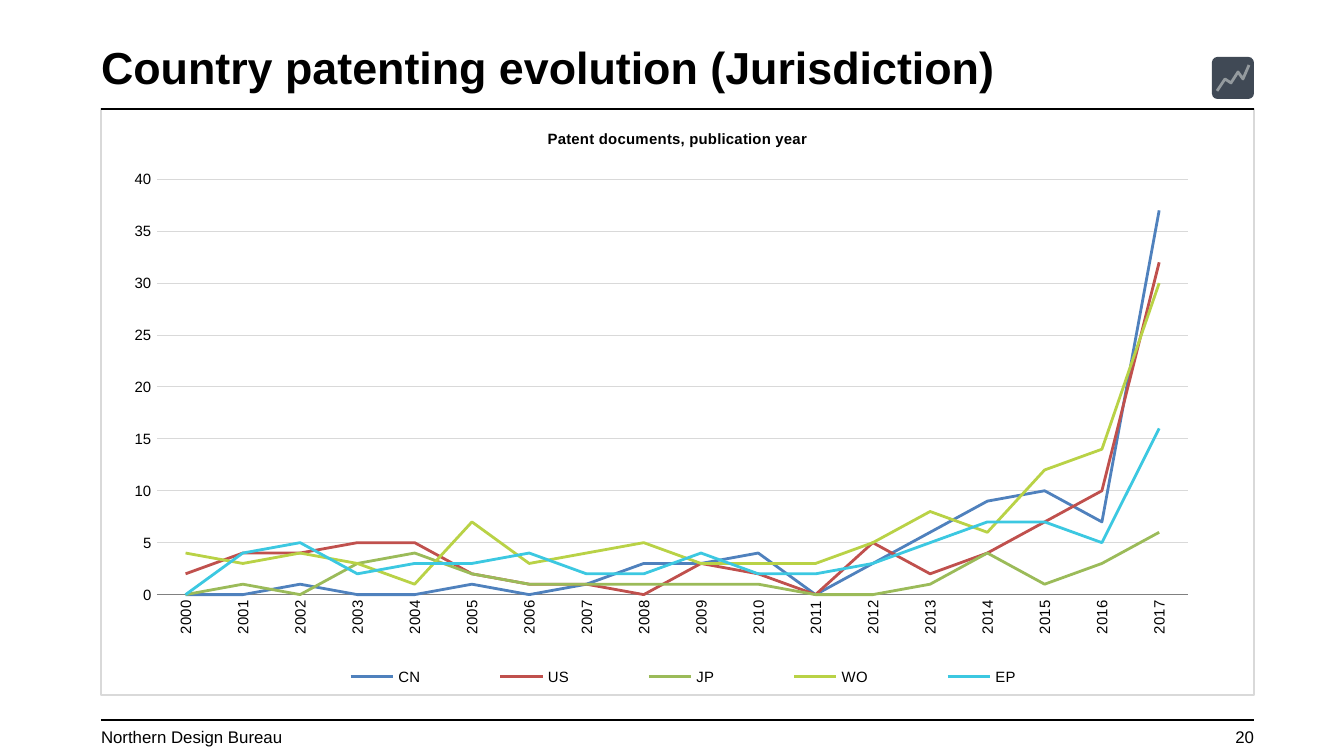
from lxml.etree import SubElement
from pptx import Presentation
from pptx.chart.data import CategoryChartData
from pptx.dml.color import RGBColor
from pptx.enum.chart import XL_CHART_TYPE, XL_LEGEND_POSITION, XL_MARKER_STYLE, XL_TICK_MARK
from pptx.enum.shapes import MSO_CONNECTOR, MSO_SHAPE
from pptx.enum.text import MSO_ANCHOR, MSO_AUTO_SIZE, PP_ALIGN
from pptx.oxml import parse_xml
from pptx.oxml.ns import nsdecls, qn
from pptx.util import Pt

SCALE = 914400 / 134.4
LEFT, TOP, WIDTH, HEIGHT = 101, 109, 1153, 586
RIGHT = LEFT + WIDTH
FONT = "Arial"
COLORS = {
    "text": "000000",
    "axis": "808080",
    "grid": "D9D9D9",
    "icon": "404955",
    "trend": "949A9E",
    "CN": "4F81BD",
    "US": "C0504D",
    "JP": "9BBB59",
    "WO": "B9D246",
    "EP": "3CC8E1",
}
YEARS = [str(year) for year in range(2000, 2018)]
DOCUMENTS = {
    "CN": (0, 0, 1, 0, 0, 1, 0, 1, 3, 3, 4, 0, 3, 6, 9, 10, 7, 37),
    "US": (2, 4, 4, 5, 5, 2, 1, 1, 0, 3, 2, 0, 5, 2, 4, 7, 10, 32),
    "JP": (0, 1, 0, 3, 4, 2, 1, 1, 1, 1, 1, 0, 0, 1, 4, 1, 3, 6),
    "WO": (4, 3, 4, 3, 1, 7, 3, 4, 5, 3, 3, 3, 5, 8, 6, 12, 14, 30),
    "EP": (0, 4, 5, 2, 3, 3, 4, 2, 2, 4, 2, 2, 3, 5, 7, 7, 5, 16),
}
TREND = [(1217, 91), (1225, 79), (1231, 83), (1238, 72), (1243, 79), (1249, 65)]


def px(*lengths):
    return [round(length * SCALE) for length in lengths]


def color(name):
    return RGBColor.from_string(COLORS[name])


def format_font(font, size, bold=False):
    font.name = FONT
    font.size = Pt(size)
    font.bold = bold
    font.color.rgb = color("text")


def format_line(line, name, width):
    line.color.rgb = color(name)
    line.width = Pt(width)


def write_text(frame, text, size=9, bold=False, align=PP_ALIGN.LEFT, anchor=MSO_ANCHOR.TOP):
    frame.margin_left = frame.margin_top = frame.margin_right = frame.margin_bottom = 0
    frame.word_wrap = True
    frame.auto_size = MSO_AUTO_SIZE.NONE
    frame.vertical_anchor = anchor
    paragraph = frame.paragraphs[0]
    paragraph.alignment = align
    run = paragraph.add_run()
    run.text = text
    format_font(run.font, size, bold)


def add_title(slide, text):
    title = slide.shapes.title
    title.left, title.top, title.width, title.height = px(LEFT, 37, WIDTH, 59)
    write_text(title.text_frame, text, size=24, bold=True, anchor=MSO_ANCHOR.MIDDLE)


def add_text(slide, text, left, width, **text_format):
    box = slide.shapes.add_textbox(*px(left, 727, width, 26))
    write_text(box.text_frame, text, **text_format)


def add_rule(slide, top, width):
    rule = slide.shapes.add_connector(MSO_CONNECTOR.STRAIGHT, *px(LEFT, top, RIGHT, top))
    format_line(rule.line, "text", width)
    SubElement(rule.element.spPr, qn("a:effectLst"))


def place_part(part, index, **layout):
    for previous in part.xpath("c:layout"):
        part.remove(previous)
    target = '<c:layoutTarget val="inner"/>' if index == 0 else ""
    modes = '<c:xMode val="edge"/><c:yMode val="edge"/>'
    sizes = "".join(f'<c:{key} val="{value}"/>' for key, value in layout.items())
    part.insert(index, parse_xml(
        f'<c:layout {nsdecls("c")}><c:manualLayout>{target}{modes}{sizes}'
        "</c:manualLayout></c:layout>"))


def format_axis(axis):
    axis.major_tick_mark = axis.minor_tick_mark = XL_TICK_MARK.NONE
    format_font(axis.tick_labels.font, 8)


def add_line_chart(slide):
    data = CategoryChartData()
    data.categories = YEARS
    for country, values in DOCUMENTS.items():
        data.add_series(country, values)
    chart = slide.shapes.add_chart(
        XL_CHART_TYPE.LINE, *px(LEFT, TOP, 1165, HEIGHT), data).chart
    format_font(chart.font, 10)

    title_frame = chart.chart_title.text_frame
    title_frame.text = "Patent documents, publication year"
    format_font(title_frame.paragraphs[0].runs[0].font, 8, bold=True)

    chart.has_legend = True
    chart.legend.position = XL_LEGEND_POSITION.BOTTOM
    chart.legend.include_in_layout = False
    format_font(chart.legend.font, 8)

    years, counts = chart.category_axis, chart.value_axis
    format_axis(years)
    format_axis(counts)
    format_line(years.format.line, "axis", 0.75)
    years._element.xpath("c:txPr/a:bodyPr")[0].set("rot", "-5400000")
    counts.minimum_scale, counts.maximum_scale, counts.major_unit = 0, 40, 5
    counts.format.line.fill.background()
    format_line(counts.major_gridlines.format.line, "grid", 0.5)

    plot = chart.plots[0]
    plot.vary_by_categories = False
    for series in plot.series:
        series.smooth = False
        series.marker.style = XL_MARKER_STYLE.NONE
        format_line(series.format.line, series.name, 1.5)

    root = chart.element
    place_part(root.xpath("c:chart/c:plotArea")[0], 0, x=0.048, y=0.12, w=0.885, h=0.709)
    place_part(root.xpath("c:chart/c:title")[0], 1, x=0.381, y=0.029)
    place_part(root.xpath("c:chart/c:legend")[0], 1, x=0.15, y=0.946, w=0.7, h=0.045)


def add_frame(slide):
    frame = slide.shapes.add_shape(MSO_SHAPE.RECTANGLE, *px(LEFT, TOP, WIDTH, HEIGHT))
    frame.shadow.inherit = False
    frame.fill.background()
    format_line(frame.line, "grid", 0.75)


def add_trend_icon(slide):
    tile = slide.shapes.add_shape(MSO_SHAPE.ROUNDED_RECTANGLE, *px(RIGHT - 42, 57, 42, 42))
    tile.adjustments[0] = 0.13
    tile.shadow.inherit = False
    tile.fill.solid()
    tile.fill.fore_color.rgb = color("icon")
    tile.line.fill.background()
    builder = slide.shapes.build_freeform(*TREND[0], scale=SCALE)
    builder.add_line_segments(TREND[1:], close=False)
    trend = builder.convert_to_shape()
    trend.shadow.inherit = False
    trend.fill.background()
    format_line(trend.line, "trend", 1.5)


def main():
    presentation = Presentation()
    presentation.slide_width, presentation.slide_height = px(1344, 756)
    slide = presentation.slides.add_slide(presentation.slide_layouts[5])
    add_rule(slide, 720, 0.75)
    add_text(slide, "Northern Design Bureau", LEFT, 228)
    add_title(slide, "Country patenting evolution (Jurisdiction)")
    add_text(slide, "20", RIGHT - 85, 85, align=PP_ALIGN.RIGHT)
    add_line_chart(slide)
    add_frame(slide)
    add_rule(slide, TOP, 1)
    add_trend_icon(slide)
    presentation.save("out.pptx")


if __name__ == "__main__":
    main()
